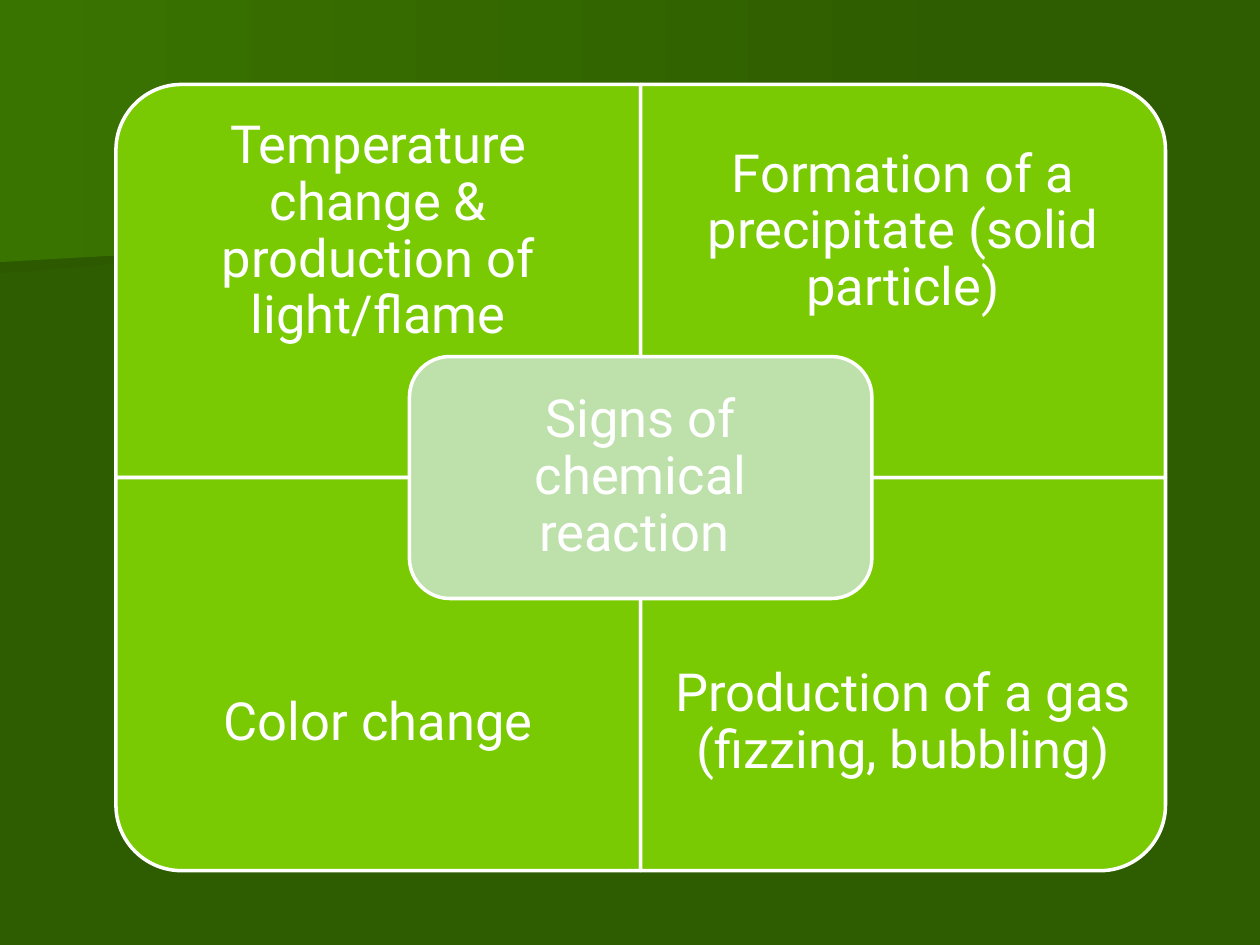
from pptx import Presentation
from pptx.dml.color import RGBColor
from pptx.enum.shapes import MSO_SHAPE as Shape
from pptx.enum.text import MSO_ANCHOR as Anchor, PP_ALIGN as Align
from pptx.util import Inches, Pt

COLORS = {
    "ground": "2E5C00",
    "band": "2D5A00",
    "glow": "3A7400",
    "quadrant": "79CA02",
    "center": "BEE1AB",
    "white": "FFFFFF",
}
FONT = "Roboto"
WIDTH, HEIGHT = 10, 7.5
LEFT, TOP, CELL_W, CELL_H = 0.92, 0.67, 4.165, 3.12
TEXT_SHARE = 0.75
CENTER_W, CENTER_H, CENTER_PAD = 3.67, 1.92, 0.095

QUADRANTS = [
    (0, 0, 270, "Temperature change & production of light/flame"),
    (1, 0, 0, "Formation of a precipitate (solid particle)"),
    (0, 1, 180, "Color change"),
    (1, 1, 90, "Production of a gas (fizzing, bubbling)"),
]
CENTER_TEXT = "Signs of chemical reaction "
BACKDROP = [
    ("band", [(7.78, 1.53), (0, 2.17), (0, 1.01), (7.79, 1.01), (7.78, 1.28)]),
    ("glow", [(7.92, 1.62), (0, 2.08), (0, 0), (7.92, 0)]),
]


def rgb(name):
    return RGBColor.from_string(COLORS[name])


def add_backdrop(page, color, points):
    corners = [(Inches(x), Inches(y)) for x, y in points]
    builder = page.shapes.build_freeform(*corners[0], scale=1.0)
    builder.add_line_segments(corners[1:], close=True)
    shape = builder.convert_to_shape()
    shape.shadow.inherit = False
    shape.line.fill.background()
    shape.fill.gradient()
    shape.fill.gradient_angle = 0
    for stop, name in zip(shape.fill.gradient_stops, (color, "ground")):
        stop.color.rgb = rgb(name)
    for stop, position in zip(shape.fill.gradient_stops, (0, 1)):
        stop.position = position


def add_panel(page, kind, mid_x, mid_y, width, height, color, turn=0):
    if turn % 180:
        width, height = height, width
    panel = page.shapes.add_shape(
        kind, Inches(mid_x - width / 2), Inches(mid_y - height / 2),
        Inches(width), Inches(height))
    panel.rotation = turn
    panel.shadow.inherit = False
    panel.fill.solid()
    panel.fill.fore_color.rgb = rgb(color)
    panel.line.color.rgb = rgb("white")
    panel.line.width = Pt(2)


def add_label(page, text, left, top, width, height, inset):
    box = page.shapes.add_textbox(
        Inches(left), Inches(top), Inches(width), Inches(height))
    frame = box.text_frame
    frame.word_wrap = True
    frame.vertical_anchor = Anchor.MIDDLE
    for side in ("left", "top", "right", "bottom"):
        setattr(frame, f"margin_{side}", Inches(inset))
    para = frame.paragraphs[0]
    para.alignment = Align.CENTER
    para.line_spacing = 0.9
    span = para.add_run()
    span.text = text
    span.font.name = FONT
    span.font.size = Pt(30)
    span.font.color.rgb = rgb("white")


def main():
    deck = Presentation()
    deck.slide_width, deck.slide_height = Inches(WIDTH), Inches(HEIGHT)
    page = deck.slides.add_slide(deck.slide_layouts[6])
    page.background.fill.solid()
    page.background.fill.fore_color.rgb = rgb("ground")

    for color, points in BACKDROP:
        add_backdrop(page, color, points)

    text_h = CELL_H * TEXT_SHARE
    for column, row, turn, text in QUADRANTS:
        left, top = LEFT + column * CELL_W, TOP + row * CELL_H
        add_panel(page, Shape.ROUND_1_RECTANGLE, left + CELL_W / 2,
                  top + CELL_H / 2, CELL_W, CELL_H, "quadrant", turn)
        add_label(page, text, left, top + row * (CELL_H - text_h),
                  CELL_W, text_h, 0.23)

    mid_x, mid_y = LEFT + CELL_W, TOP + CELL_H
    add_panel(page, Shape.ROUNDED_RECTANGLE, mid_x, mid_y,
              CENTER_W, CENTER_H, "center")
    label_w, label_h = CENTER_W - 2 * CENTER_PAD, CENTER_H - 2 * CENTER_PAD
    add_label(page, CENTER_TEXT, mid_x - label_w / 2, mid_y - label_h / 2,
              label_w, label_h, 0.12)

    deck.save("out.pptx")


if __name__ == "__main__":
    main()
